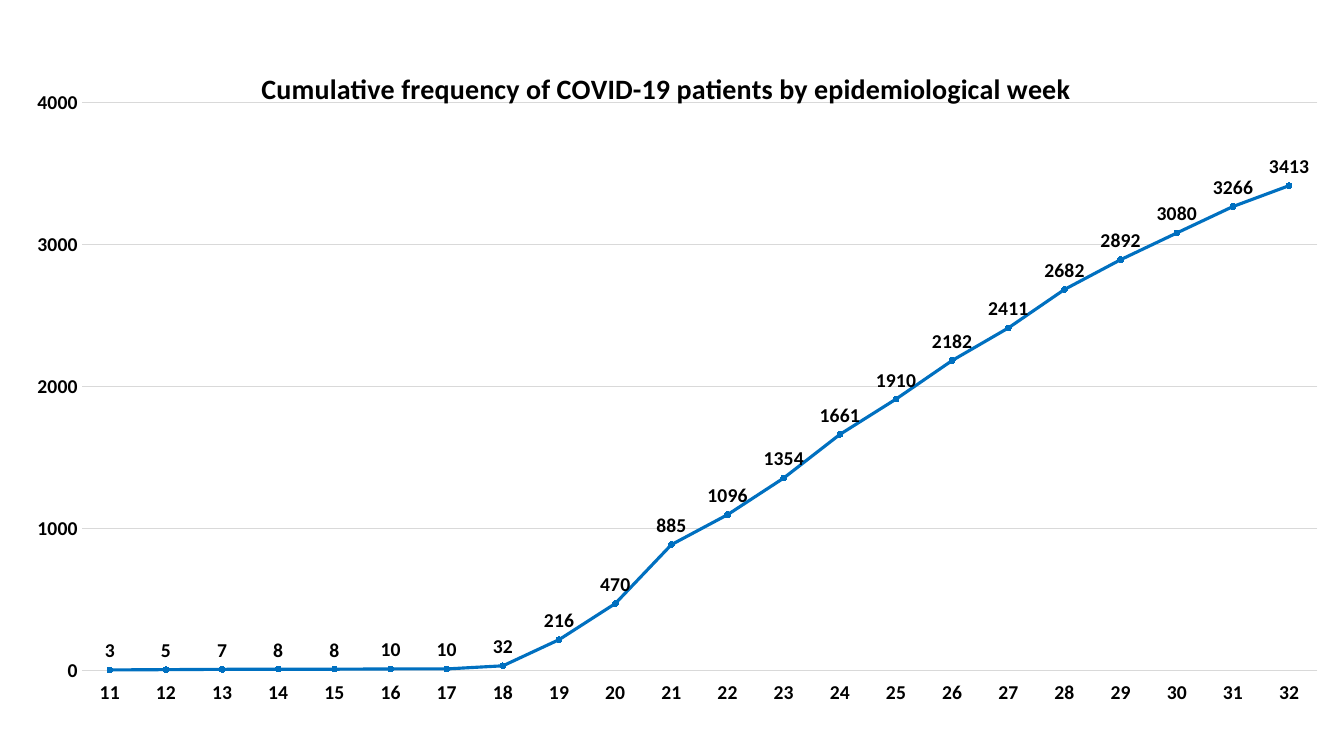
from lxml.etree import SubElement
from pptx import Presentation
from pptx.chart.data import CategoryChartData
from pptx.dml.color import RGBColor
from pptx.enum.chart import (XL_CHART_TYPE, XL_LABEL_POSITION, XL_MARKER_STYLE,
                             XL_TICK_LABEL_POSITION, XL_TICK_MARK)
from pptx.oxml.ns import qn
from pptx.util import Emu, Pt

COLORS = {"text": "000000", "grid": "D9D9D9", "line": "0070C0"}
WEEKS = range(11, 33)
PATIENTS = [3, 5, 7, 8, 8, 10, 10, 32, 216, 470, 885, 1096, 1354, 1661,
            1910, 2182, 2411, 2682, 2892, 3080, 3266, 3413]
TITLE = "Cumulative frequency of COVID-19 patients by epidemiological week"


class ChartPage:
    font_name = "Calibri"
    scale = 914400 / 100.8

    def __init__(self, deck):
        deck.slide_width = self.px(1344)
        deck.slide_height = self.px(756)
        self.page = deck.slides.add_slide(deck.slide_layouts[6])

    def px(self, length):
        return Emu(round(length * self.scale))

    def color(self, name):
        return RGBColor.from_string(COLORS[name])

    def style_font(self, font, size):
        font.name = self.font_name
        font.size = Pt(size)
        font.bold = True
        font.color.rgb = self.color("text")

    def style_line(self, line, name, width):
        line.color.rgb = self.color(name)
        line.width = Pt(width)

    def place(self, parent, position, **settings):
        layout = parent.find(qn("c:layout"))
        if layout is None:
            layout = SubElement(parent, qn("c:layout"))
            parent.insert(1 if parent.find(qn("c:tx")) is not None else 0, layout)
        for child in list(layout):
            layout.remove(child)
        manual = SubElement(layout, qn("c:manualLayout"))
        for tag, value in {**settings, **position}.items():
            SubElement(manual, qn(f"c:{tag}")).set("val", str(value))

    def line_chart(self, left, top, width, height):
        data = CategoryChartData(number_format="0")
        data.categories = [str(week) for week in WEEKS]
        data.add_series("Series 1", PATIENTS)
        frame = self.page.shapes.add_chart(
            XL_CHART_TYPE.LINE_MARKERS, self.px(left), self.px(top),
            self.px(width), self.px(height), data)
        chart = frame.chart
        chart.has_legend = False
        chart.font.name = self.font_name
        chart.font.size = Pt(10)
        chart.plots[0].vary_by_categories = False
        self.place(chart.plots[0]._element.getparent(),
                   {"x": 0.044, "y": 0.074, "w": 0.941, "h": 0.87},
                   layoutTarget="inner", xMode="edge", yMode="edge")
        return chart

    def title(self, chart, text):
        chart.has_title = True
        para = chart.chart_title.text_frame.paragraphs[0]
        para.text = text
        self.style_font(para.font, 20)
        title = chart.chart_title._element
        self.place(title, {"x": 0.177, "y": 0.015}, xMode="edge", yMode="edge")
        title.find(qn("c:overlay")).set("val", "1")

    def axes(self, chart):
        weeks, counts = chart.category_axis, chart.value_axis
        for axis in (weeks, counts):
            axis.major_tick_mark = axis.minor_tick_mark = XL_TICK_MARK.NONE
            self.style_font(axis.tick_labels.font, 14)
        weeks.tick_label_position = XL_TICK_LABEL_POSITION.LOW
        self.style_line(weeks.format.line, "grid", 1)
        counts.minimum_scale, counts.maximum_scale = 0, 4000
        counts.major_unit = 1000
        counts.tick_labels.number_format = "0"
        counts.tick_labels.number_format_is_linked = False
        counts.format.line.fill.background()
        self.style_line(counts.major_gridlines.format.line, "grid", 1)

    def series(self, chart):
        patients = chart.plots[0].series[0]
        patients.smooth = False
        self.style_line(patients.format.line, "line", 2.25)
        marker = patients.marker
        marker.style = XL_MARKER_STYLE.CIRCLE
        marker.size = 4
        marker.format.fill.solid()
        marker.format.fill.fore_color.rgb = self.color("line")
        self.style_line(marker.format.line, "line", 0.75)
        labels = patients.data_labels
        labels.show_value = True
        labels.position = XL_LABEL_POSITION.ABOVE
        labels.number_format = "0"
        labels.number_format_is_linked = False
        self.style_font(labels.font, 14)


def main():
    deck = Presentation()
    page = ChartPage(deck)
    chart = page.line_chart(24, 54, 1313, 653)
    page.title(chart, TITLE)
    page.axes(chart)
    page.series(chart)
    deck.save("out.pptx")


if __name__ == "__main__":
    main()
